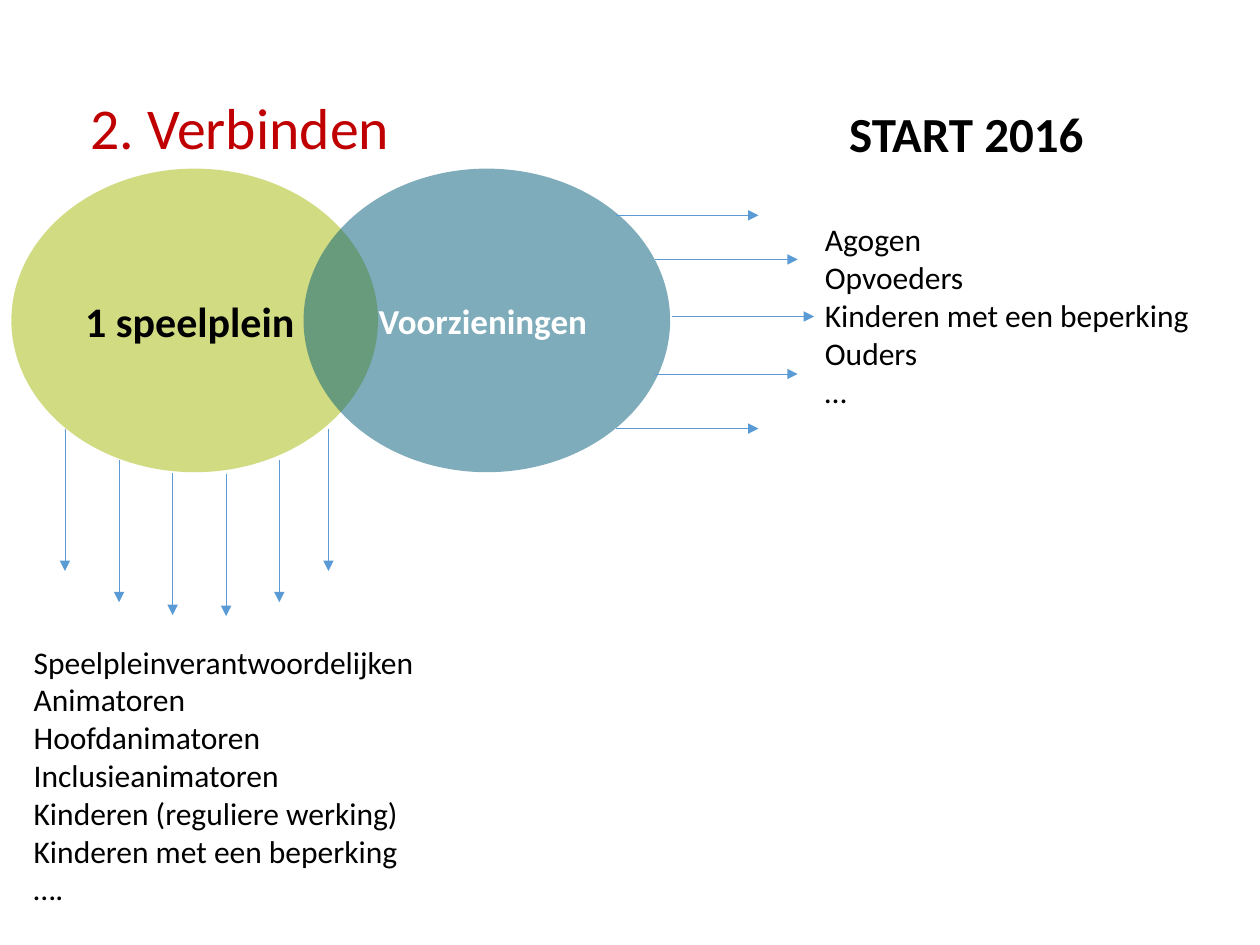
from dataclasses import dataclass

import lxml.etree
import pptx
import pptx.dml.color
import pptx.enum.shapes
import pptx.enum.text
import pptx.oxml.ns
import pptx.util

Cm = pptx.util.Cm
RGBColor = pptx.dml.color.RGBColor
qn = pptx.oxml.ns.qn

RED = RGBColor(0xC0, 0x00, 0x00)
BLACK = RGBColor(0x00, 0x00, 0x00)
WHITE = RGBColor(0xFF, 0xFF, 0xFF)
LIME = RGBColor(0xA5, 0xB8, 0x07)
TEAL = RGBColor(0x01, 0x5A, 0x78)
BLUE = RGBColor(0x5B, 0x9B, 0xD5)
FONT = "Calibri"
ARROW_LENGTH = 2.87


# All positions and lengths below are in centimetres
@dataclass
class Circle:
    left: float
    text: str
    fill: RGBColor
    color: RGBColor
    size: int


@dataclass
class Label:
    left: float
    top: float
    width: float
    height: float
    lines: list[str]
    size: int
    bold: bool = False


CIRCLES = [
    Circle(0.23, "1 speelplein ", LIME, BLACK, 24),
    Circle(6.12, "Voorzieningen ", TEAL, WHITE, 20),
]
LABELS = [
    Label(0.43, 12.83, 8.26, 5.64, [
        "Speelpleinverantwoordelijken", "Animatoren", "Hoofdanimatoren",
        "Inclusieanimatoren", "Kinderen (reguliere werking)",
        "Kinderen met een beperking", "….",
    ], 18),
    Label(16.87, 1.96, 6.88, 1.45, ["START 2016"], 28, True),
    Label(16.38, 4.32, 8.26, 4.11, [
        "Agogen", "Opvoeders", "Kinderen met een beperking", "Ouders", "…",
    ], 18),
]
# Starting points on the edges of the circles
DOWN_STARTS = [(1.31, 8.64), (2.4, 9.27), (3.48, 9.53),
               (4.56, 9.55), (5.63, 9.27), (6.62, 8.64)]
RIGHT_STARTS = [(12.42, 4.34), (13.21, 5.23), (13.54, 6.38),
                (13.21, 7.54), (12.42, 8.64)]


def format_text(frame, size: int, color: RGBColor, bold: bool = False) -> None:
    for para in frame.paragraphs:
        for span in para.runs:
            span.font.name = FONT
            span.font.size = pptx.util.Pt(size)
            span.font.bold = bold
            span.font.color.rgb = color


def add_circle(page, circle: Circle) -> None:
    shape = page.shapes.add_shape(
        pptx.enum.shapes.MSO_SHAPE.OVAL,
        Cm(circle.left), Cm(3.4), Cm(7.39), Cm(6.12))
    shape.shadow.inherit = False
    shape.line.fill.background()
    shape.fill.solid()
    shape.fill.fore_color.rgb = circle.fill
    # Half transparent, so that the overlap shows
    color = shape._element.spPr.find(qn("a:solidFill")).find(qn("a:srgbClr"))
    lxml.etree.SubElement(color, qn("a:alpha"), val="50000")
    frame = shape.text_frame
    frame.text = circle.text
    frame.vertical_anchor = pptx.enum.text.MSO_ANCHOR.MIDDLE
    frame.paragraphs[0].alignment = pptx.enum.text.PP_ALIGN.CENTER
    format_text(frame, circle.size, circle.color, True)


def add_label(page, label: Label) -> None:
    box = page.shapes.add_textbox(
        Cm(label.left), Cm(label.top), Cm(label.width), Cm(label.height))
    frame = box.text_frame
    frame.word_wrap = True
    frame.auto_size = pptx.enum.text.MSO_AUTO_SIZE.SHAPE_TO_FIT_TEXT
    frame.text = "\n".join(label.lines)
    format_text(frame, label.size, BLACK, label.bold)


def add_arrow(page, x: float, y: float, across: float, down: float) -> None:
    arrow = page.shapes.add_connector(
        pptx.enum.shapes.MSO_CONNECTOR.STRAIGHT,
        Cm(x), Cm(y), Cm(x + across), Cm(y + down))
    arrow.line.color.rgb = BLUE
    arrow.line.width = pptx.util.Pt(0.5)
    properties = arrow._element.spPr
    lxml.etree.SubElement(
        properties.find(qn("a:ln")), qn("a:tailEnd"), type="triangle")
    lxml.etree.SubElement(properties, qn("a:effectLst"))


def add_title(page, text: str) -> None:
    title = page.shapes.title
    title.left, title.top = Cm(1.57), Cm(1.73)
    title.width, title.height = Cm(22.23), Cm(1.68)
    frame = title.text_frame
    frame.text = text
    frame.word_wrap = True
    frame.auto_size = pptx.enum.text.MSO_AUTO_SIZE.SHAPE_TO_FIT_TEXT
    frame.vertical_anchor = pptx.enum.text.MSO_ANCHOR.TOP
    frame.paragraphs[0].alignment = pptx.enum.text.PP_ALIGN.LEFT
    format_text(frame, 33, RED)


def main() -> None:
    deck = pptx.Presentation()
    deck.slide_width, deck.slide_height = Cm(25.4), Cm(19.05)
    page = deck.slides.add_slide(deck.slide_layouts.get_by_name("Title Only"))

    add_title(page, "2. Verbinden")
    for circle in CIRCLES:
        add_circle(page, circle)
    # Arrows from each circle to the people involved
    for x, y in DOWN_STARTS:
        add_arrow(page, x, y, 0, ARROW_LENGTH)
    for x, y in RIGHT_STARTS:
        add_arrow(page, x, y, ARROW_LENGTH, 0)
    for label in LABELS:
        add_label(page, label)

    deck.save("out.pptx")


if __name__ == "__main__":
    main()
